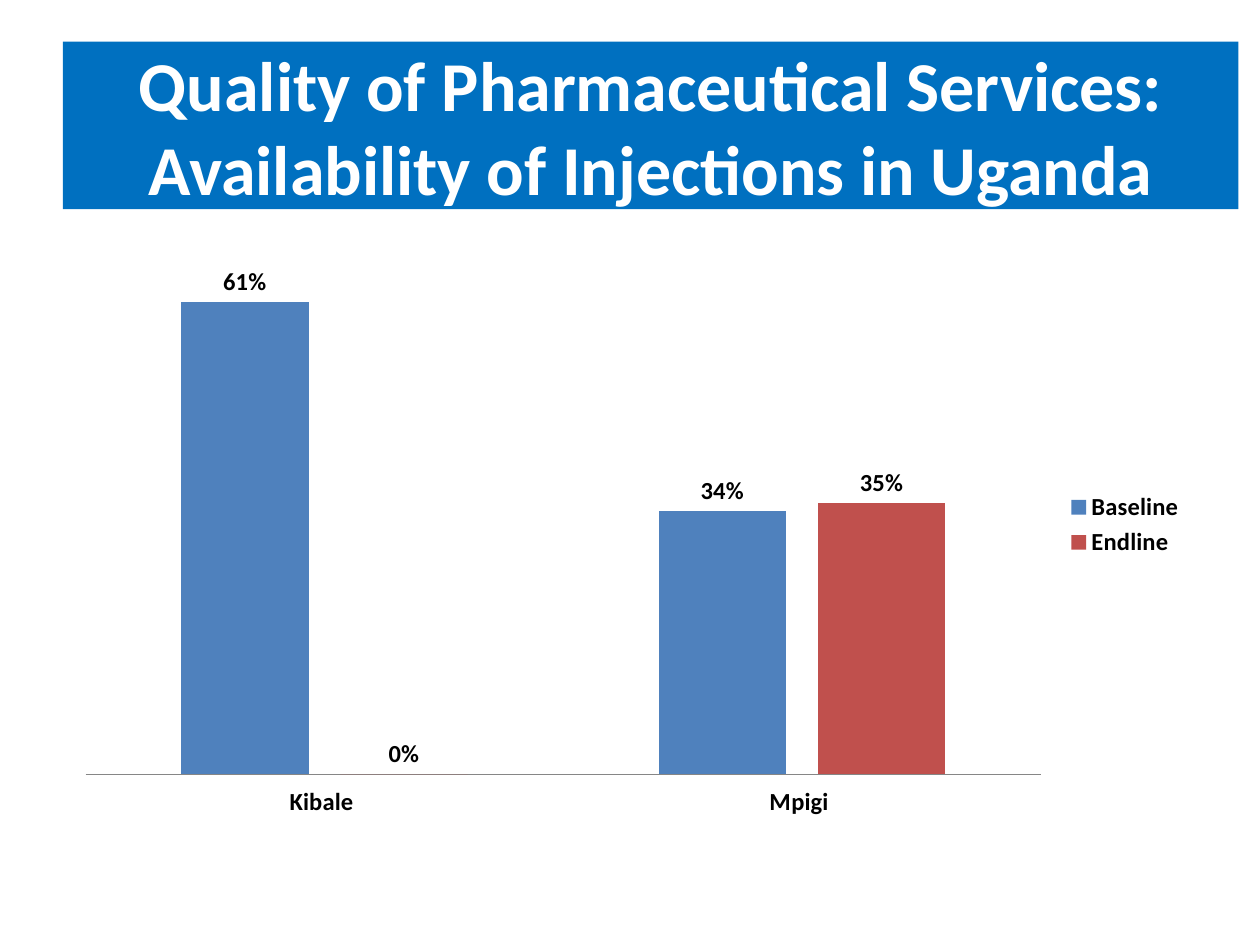
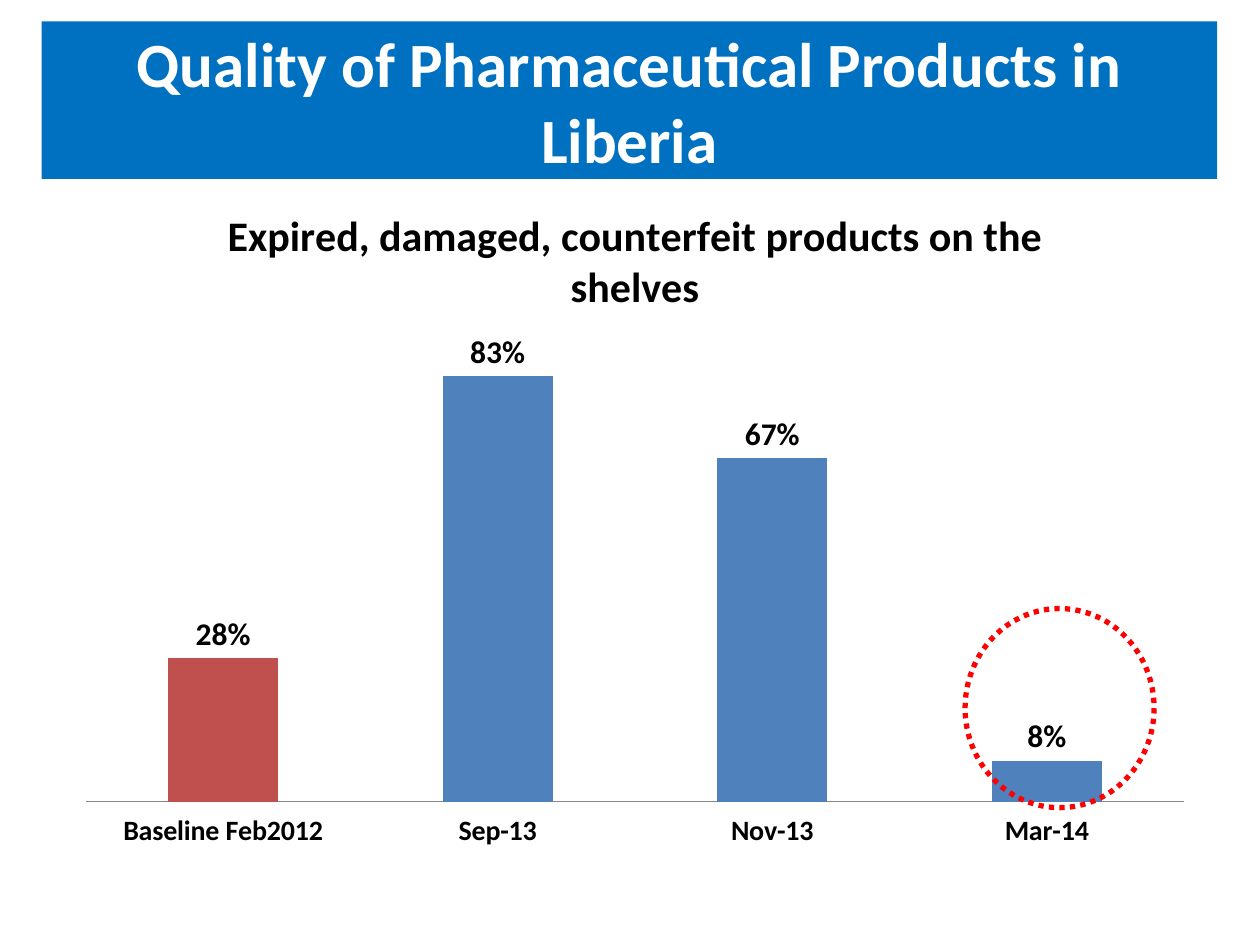
from pptx import Presentation
from pptx.chart.data import CategoryChartData as ChartData
from pptx.dml.color import RGBColor
from pptx.enum.chart import XL_CHART_TYPE as ChartType
from pptx.enum.chart import XL_LABEL_POSITION as LabelPosition
from pptx.enum.chart import XL_LEGEND_POSITION as LegendPosition
from pptx.enum.chart import XL_TICK_LABEL_POSITION as TickLabel
from pptx.enum.chart import XL_TICK_MARK as TickMark
from pptx.enum.dml import MSO_LINE as LineDash
from pptx.enum.shapes import MSO_SHAPE as Shape
from pptx.enum.text import MSO_ANCHOR as Anchor
from pptx.enum.text import PP_ALIGN as Align
from pptx.util import Inches, Pt

FONT = "Calibri"
COLORS = {
    "band": "0070C0",
    "white": "FFFFFF",
    "text": "000000",
    "blue": "4F81BD",
    "red": "C0504D",
    "axis": "868686",
    "highlight": "FF0000",
}


def rgb(name):
    return RGBColor.from_string(COLORS[name])


class SlideBuilder:
    """Holds the shared style and the slide being built."""

    def __init__(self):
        self.deck = Presentation()
        self.deck.slide_width = Inches(10)
        self.deck.slide_height = Inches(7.5)
        self.page = None

    def new_page(self):
        self.page = self.deck.slides.add_slide(self.deck.slide_layouts[6])

    def style_font(self, font, size, color="text", bold=True):
        font.name = FONT
        font.size = Pt(size)
        font.bold = bold
        font.color.rgb = rgb(color)

    def add_shape(self, kind, place):
        shape = self.page.shapes.add_shape(kind, *map(Inches, place))
        shape.shadow.inherit = False
        return shape

    def title_band(self, lines, place, size):
        band = self.add_shape(Shape.RECTANGLE, place)
        band.fill.solid()
        band.fill.fore_color.rgb = rgb("band")
        band.line.fill.background()
        box = band.text_frame
        box.word_wrap = True
        box.vertical_anchor = Anchor.MIDDLE
        para = box.paragraphs[0]
        para.alignment = Align.CENTER
        for index, line in enumerate(lines):
            if index:
                para.add_line_break()
            span = para.add_run()
            span.text = line
            self.style_font(span.font, size, "white")

    def column_chart(self, place, categories, series, top, axis_size, label_size):
        """Series maps each name to its colour and values."""
        data = ChartData(number_format="0%")
        data.categories = categories
        for name, (_, values) in series.items():
            data.add_series(name, values)
        frame = self.page.shapes.add_chart(
            ChartType.COLUMN_CLUSTERED, *map(Inches, place), data)
        chart = frame.chart
        self.style_font(chart.font, 10, bold=False)
        chart.has_title = False
        chart.has_legend = False

        # Axes
        values_axis = chart.value_axis
        values_axis.minimum_scale = 0
        values_axis.maximum_scale = top
        values_axis.has_major_gridlines = False
        values_axis.visible = False
        category_axis = chart.category_axis
        category_axis.major_tick_mark = TickMark.NONE
        category_axis.tick_label_position = TickLabel.LOW
        category_axis.format.line.color.rgb = rgb("axis")
        self.style_font(category_axis.tick_labels.font, axis_size)

        # Columns and their labels
        plot = chart.plots[0]
        plot.gap_width = 150
        plot.overlap = -25
        plot.vary_by_categories = False
        for column, (color, _) in zip(plot.series, series.values()):
            column.invert_if_negative = False
            column.format.fill.solid()
            column.format.fill.fore_color.rgb = rgb(color)
            labels = column.data_labels
            labels.show_value = True
            labels.number_format = "0%"
            labels.number_format_is_linked = False
            labels.position = LabelPosition.OUTSIDE_END
            self.style_font(labels.font, label_size)
        return chart

    def chart_legend(self, chart, size):
        chart.has_legend = True
        chart.legend.position = LegendPosition.RIGHT
        chart.legend.include_in_layout = False
        self.style_font(chart.legend.font, size)

    def chart_title(self, chart, text, size):
        chart.has_title = True
        chart.chart_title.include_in_layout = False
        span = chart.chart_title.text_frame.paragraphs[0].add_run()
        span.text = text
        self.style_font(span.font, size)

    def color_point(self, chart, index, color):
        fill = chart.plots[0].series[0].points[index].format.fill
        fill.solid()
        fill.fore_color.rgb = rgb(color)

    def dotted_ring(self, place):
        ring = self.add_shape(Shape.OVAL, place)
        ring.fill.background()
        ring.line.color.rgb = rgb("highlight")
        ring.line.width = Pt(3)
        ring.line.dash_style = LineDash.ROUND_DOT


def uganda_page(builder):
    builder.new_page()
    builder.title_band(
        ["Quality of Pharmaceutical Services:",
         "Availability of Injections in Uganda"],
        (0.5, 0.33, 9.33, 1.33), 40)
    chart = builder.column_chart(
        (0.5, 1.75, 9, 4.83), ["Kibale ", "Mpigi "],
        {"Baseline": ("blue", (0.61, 0.34)), "Endline": ("red", (0, 0.35))},
        top=0.7, axis_size=14, label_size=14)
    builder.chart_legend(chart, 14)


def liberia_page(builder):
    builder.new_page()
    builder.title_band(
        ["Quality of Pharmaceutical Products in Liberia"],
        (0.33, 0.17, 9.33, 1.25), 36)
    chart = builder.column_chart(
        (0.5, 1.42, 9.08, 5.42),
        ["Baseline Feb2012", "Sep-13", "Nov-13", "Mar-14"],
        {"Series 1": ("blue", (0.28, 0.83, 0.67, 0.08))},
        top=0.9, axis_size=16, label_size=18)
    builder.chart_title(
        chart, "Expired, damaged, counterfeit products on the shelves", 24)
    builder.color_point(chart, 0, "red")
    # Ring around the latest result
    builder.dotted_ring((7.66, 4.83, 1.5, 1.58))


def main():
    builder = SlideBuilder()
    uganda_page(builder)
    liberia_page(builder)
    builder.deck.save("out.pptx")


if __name__ == "__main__":
    main()
